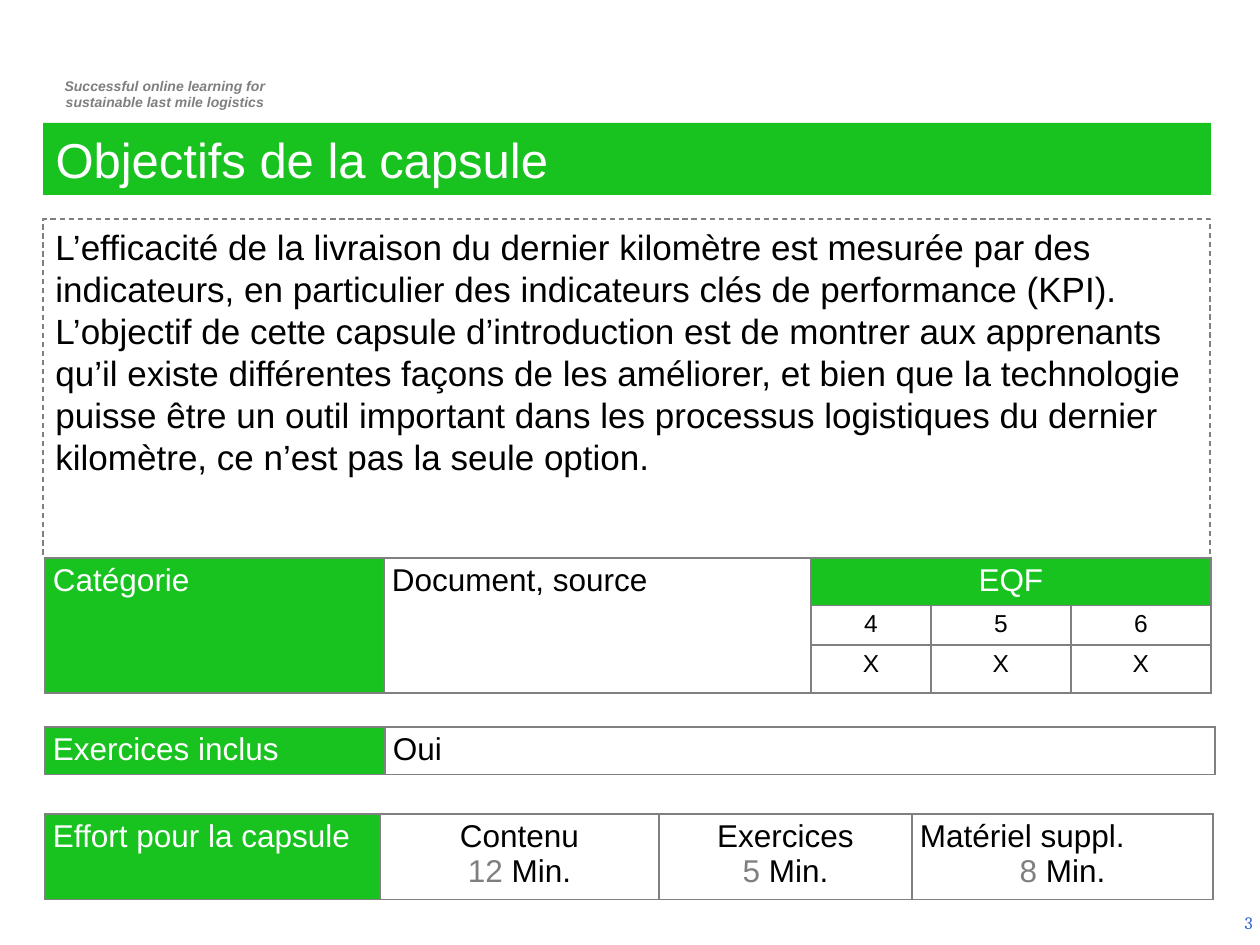
from pptx import Presentation
from pptx.dml.color import RGBColor as RGB
from pptx.enum.dml import MSO_LINE as Dash
from pptx.enum.shapes import MSO_SHAPE as Shape
from pptx.enum.text import MSO_ANCHOR as Anchor, PP_ALIGN as Align
from pptx.oxml import parse_xml
from pptx.oxml.ns import nsdecls
from pptx.util import Emu, Pt

# Content: a paragraph is (alignment, [(text, colour), ...])
L, C, R = Align.LEFT, Align.CENTER, Align.RIGHT
TITLE = "Objectifs de la capsule"
MOTTO = ["Successful online learning for", "sustainable last mile logistics"]
GOAL = (
    "L’efficacité de la livraison du dernier kilomètre est mesurée par des "
    "indicateurs, en particulier des indicateurs clés de performance (KPI). "
    "L’objectif de cette capsule d’introduction est de montrer aux apprenants "
    "qu’il existe différentes façons de les améliorer, et bien que la technologie "
    "puisse être un outil important dans les processus logistiques du dernier "
    "kilomètre, ce n’est pas la seule option."
)
PAGE = "3"


def effort(name, time, align=C):
    return [(align, [(name, "text")]), (C, [(time + " ", "grey"), ("Min.", "text")])]


def plain(text, align=L, color="text"):
    return [(align, [(text, color)])]


LEVELS = ["4", "5", "6"]
TABLES = [
    dict(
        top=558, cols=[339, 427, 120, 140, 140], rows=[47, 39, 47],
        merges=[(0, 0, 2, 0), (0, 1, 2, 1), (0, 2, 0, 4)],
        heads=[(0, 0), (0, 2)],
        cells=[
            [plain("Catégorie", L, "white"), plain("Document, source"),
             plain("EQF", C, "white"), None, None],
            [None, None] + [plain(level, C) for level in LEVELS],
            [None, None] + [plain("X", C) for level in LEVELS],
        ],
    ),
    dict(
        top=727, cols=[340, 830], rows=[47], merges=[], heads=[(0, 0)],
        cells=[[plain("Exercices inclus", L, "white"), plain("Oui")]],
    ),
    dict(
        top=814, cols=[335, 279, 253, 301], rows=[85], merges=[], heads=[(0, 0)],
        cells=[[plain("Effort pour la capsule", L, "white"), effort("Contenu", "12"),
                effort("Exercices", "5"), effort("Matériel suppl.", "8", L)]],
    ),
]

# Theme
THEME = dict(
    green="18C320", text="000000", white="FFFFFF", grey="7F7F7F",
    line="808080", blue="3366CC", font="Arial", page_font="Cambria",
    title=28, body=20, cell=18, level=14, motto=8, page=10,
)
PX = 914400 // 126


def px(n):
    return Emu(n * PX)


def paint(name):
    return RGB.from_string(THEME[name])


def place(shape, *box):
    shape.left, shape.top, shape.width, shape.height = map(px, box)


def write(frame, paras, size, font="font", bold=None, italic=None):
    for i, (align, runs) in enumerate(paras):
        para = frame.add_paragraph() if i else frame.paragraphs[0]
        para.alignment = align
        for text, color in runs:
            run = para.add_run()
            run.text = text
            run.font.name = THEME[font]
            run.font.size = Pt(THEME[size])
            run.font.bold, run.font.italic = bold, italic
            run.font.color.rgb = paint(color)


def add_text(slide, box, paras, size, **style):
    frame = slide.shapes.add_textbox(*map(px, box)).text_frame
    frame.word_wrap = True
    write(frame, paras, size, **style)
    return frame


def border(cell):
    props = cell._tc.get_or_add_tcPr()
    for i, side in enumerate(("lnL", "lnR", "lnT", "lnB")):
        props.insert(i, parse_xml(
            f'<a:{side} {nsdecls("a")} w="{Pt(1)}"><a:solidFill>'
            f'<a:srgbClr val="{THEME["line"]}"/></a:solidFill></a:{side}>'))


def add_grid(slide, top, cols, rows, merges, heads, cells):
    box = map(px, (45, top, sum(cols), sum(rows)))
    table = slide.shapes.add_table(len(rows), len(cols), *box).table
    table.first_row = table.horz_banding = False
    for col, width in zip(table.columns, cols):
        col.width = px(width)
    for row, height in zip(table.rows, rows):
        row.height = px(height)
    for r1, c1, r2, c2 in merges:
        table.cell(r1, c1).merge(table.cell(r2, c2))
    for r, row in enumerate(cells):
        for c, paras in enumerate(row):
            cell = table.cell(r, c)
            cell.margin_left = cell.margin_right = px(8)
            cell.margin_top = cell.margin_bottom = px(5)
            if (r, c) in heads:
                cell.fill.solid()
                cell.fill.fore_color.rgb = paint("green")
            else:
                cell.fill.background()
            border(cell)
            if paras:
                write(cell.text_frame, paras, "level" if r else "cell")


def main():
    deck = Presentation()
    deck.slide_width, deck.slide_height = px(1260), px(945)
    slide = deck.slides.add_slide(deck.slide_layouts[5])

    # Motto and page number
    add_text(slide, (37, 71, 256, 47), [(C, [(line, "grey")]) for line in MOTTO],
             "motto", bold=True, italic=True)
    page = add_text(slide, (971, 898, 294, 50), plain(PAGE, R, "blue"),
                    "page", font="page_font")
    page.vertical_anchor = Anchor.MIDDLE

    # Title bar
    title = slide.shapes.title
    place(title, 43, 123, 1168, 72)
    title.fill.solid()
    title.fill.fore_color.rgb = paint("green")
    title.text_frame.vertical_anchor = Anchor.MIDDLE
    write(title.text_frame, plain(TITLE, L, "white"), "title")

    # Goal in a dashed frame
    goal = slide.shapes.add_shape(Shape.RECTANGLE, *map(px, (43, 219, 1167, 339)))
    goal.shadow.inherit = False
    goal.fill.background()
    goal.line.color.rgb = paint("line")
    goal.line.width = Pt(0.75)
    goal.line.dash_style = Dash.DASH
    goal.text_frame.word_wrap = True
    goal.text_frame.vertical_anchor = Anchor.TOP
    write(goal.text_frame, plain(GOAL), "body")

    # Tables
    for table in TABLES:
        add_grid(slide, **table)

    deck.save("out.pptx")


if __name__ == "__main__":
    main()
